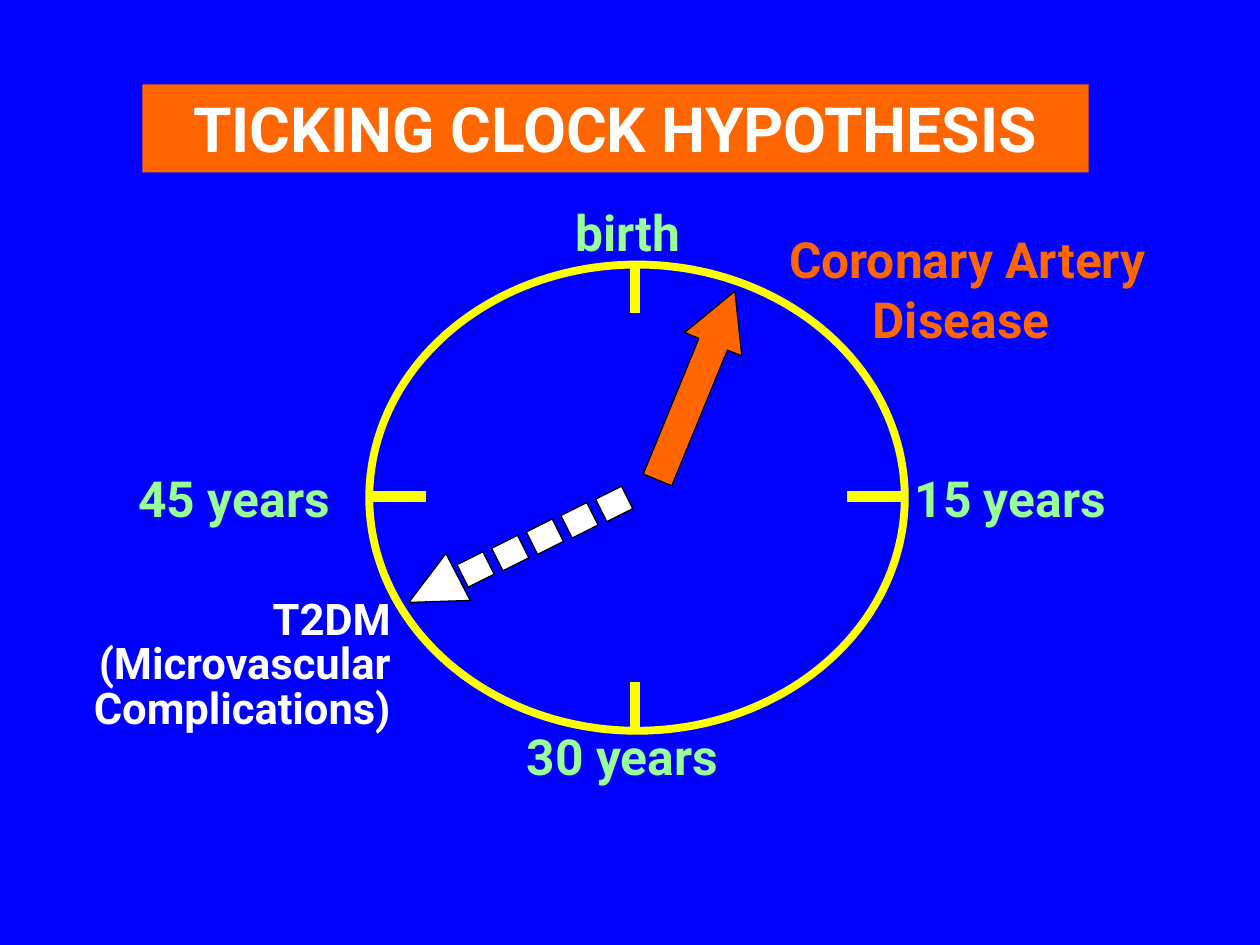
from lxml import etree
from pptx import Presentation
from pptx.dml.color import RGBColor
from pptx.enum import shapes, text
from pptx.oxml import ns
from pptx.util import Pt

FONT = "Roboto"
BLUE, ORANGE, YELLOW = "0000FF", "FF6600", "FFFF00"
GREEN, WHITE, BLACK = "99FF99", "FFFFFF", "000000"


def paint(target, color):
    if hasattr(target, "solid"):
        target.solid()
        target.fore_color.rgb = RGBColor.from_string(color)
    else:
        target.rgb = RGBColor.from_string(color)


def write(frame, paragraphs, size, color, align, spacing=None):
    frame.word_wrap = False
    frame.vertical_anchor = text.MSO_ANCHOR.TOP
    for index, lines in enumerate(paragraphs):
        paragraph = frame.add_paragraph() if index else frame.paragraphs[0]
        paragraph.alignment = align
        if spacing:
            paragraph.line_spacing = spacing
        for position, line in enumerate(lines.split("\n")):
            if position:
                paragraph.add_line_break()
            run = paragraph.add_run()
            run.text = line
            run.font.name = FONT
            run.font.size = Pt(size)
            run.font.bold = True
            paint(run.font.color, color)


def add_title(slide, wording, box):
    title = slide.shapes.title
    title.left, title.top, title.width, title.height = map(Pt, box)
    paint(title.fill, ORANGE)
    title.text_frame.auto_size = text.MSO_AUTO_SIZE.NONE
    write(title.text_frame, [wording], 35.6, WHITE, text.PP_ALIGN.CENTER)


def add_label(slide, paragraphs, box, color, size=28.4,
              align=text.PP_ALIGN.CENTER, spacing=None):
    label = slide.shapes.add_textbox(*map(Pt, box))
    write(label.text_frame, paragraphs, size, color, align, spacing)
    label.text_frame.auto_size = text.MSO_AUTO_SIZE.SHAPE_TO_FIT_TEXT


def add_figure(slide, kind, box, fill, line=BLACK, weight=0.75, rotation=0):
    figure = slide.shapes.add_shape(kind, *map(Pt, box))
    figure.shadow.inherit = False
    figure.rotation = rotation
    if fill:
        paint(figure.fill, fill)
    else:
        figure.fill.background()
    paint(figure.line.fill, line)
    figure.line.width = Pt(weight)
    return figure


def add_tick(slide, start, end):
    tick = slide.shapes.add_connector(
        shapes.MSO_CONNECTOR.STRAIGHT, *map(Pt, start + end))
    paint(tick.line.fill, YELLOW)
    tick.line.width = Pt(6)
    etree.SubElement(tick._element.spPr, ns.qn("a:effectLst"))


def add_dashed_hand(slide):
    for step in range(5):
        add_figure(slide, shapes.MSO_SHAPE.RECTANGLE,
                   (342.7 - 19.8 * step, 280.8 + 9.36 * step, 16.6, 14.4),
                   WHITE, rotation=333.4)
    add_figure(slide, shapes.MSO_SHAPE.ISOSCELES_TRIANGLE,
               (232.6, 321.1, 30.2, 31.7), WHITE, rotation=242.7)


def add_solid_hand(slide):
    hand = add_figure(slide, shapes.MSO_SHAPE.UP_ARROW,
                      (380.2, 162, 35.3, 116.6), ORANGE, rotation=22.3)
    hand.adjustments[0] = 0.5
    hand.adjustments[1] = 0.93


def add_dial(slide):
    add_figure(slide, shapes.MSO_SHAPE.OVAL, (211, 151.2, 306, 266.4),
               None, YELLOW, 4.5)
    center_x, center_y = 362.9, 283.7
    for top in (149.8, 389.5):
        add_tick(slide, (center_x, top), (center_x, top + 28.8))
    for left in (483.8, 211):
        add_tick(slide, (left, center_y), (left + 32.4, center_y))


def main():
    deck = Presentation()
    deck.slide_width, deck.slide_height = Pt(720), Pt(540)
    slide = deck.slides.add_slide(deck.slide_layouts[5])
    paint(slide.background.fill, BLUE)

    add_title(slide, "TICKING CLOCK HYPOTHESIS", (81.4, 48.2, 540.7, 50.4))
    ages = [
        ("birth", 319.7, 111.6, 78.5),
        ("15 years", 512.6, 263.5, 129.6),
        ("30 years", 290.9, 411.1, 129.6),
        ("45 years", 69.1, 263.5, 129.6),
    ]
    for age, left, top, width in ages:
        add_label(slide, [age], (left, top, width, 41.8), GREEN)
    add_label(slide, ["T2DM", "(Microvascular\nComplications)"],
              (34.6, 339.1, 195.8, 84.2), WHITE, 24.9,
              text.PP_ALIGN.RIGHT, 0.85)
    add_label(slide, [" Coronary Artery", "Disease"],
              (428.4, 127.4, 241.9, 76.3), ORANGE)
    add_solid_hand(slide)
    add_dashed_hand(slide)
    add_dial(slide)
    deck.save("out.pptx")


if __name__ == "__main__":
    main()
